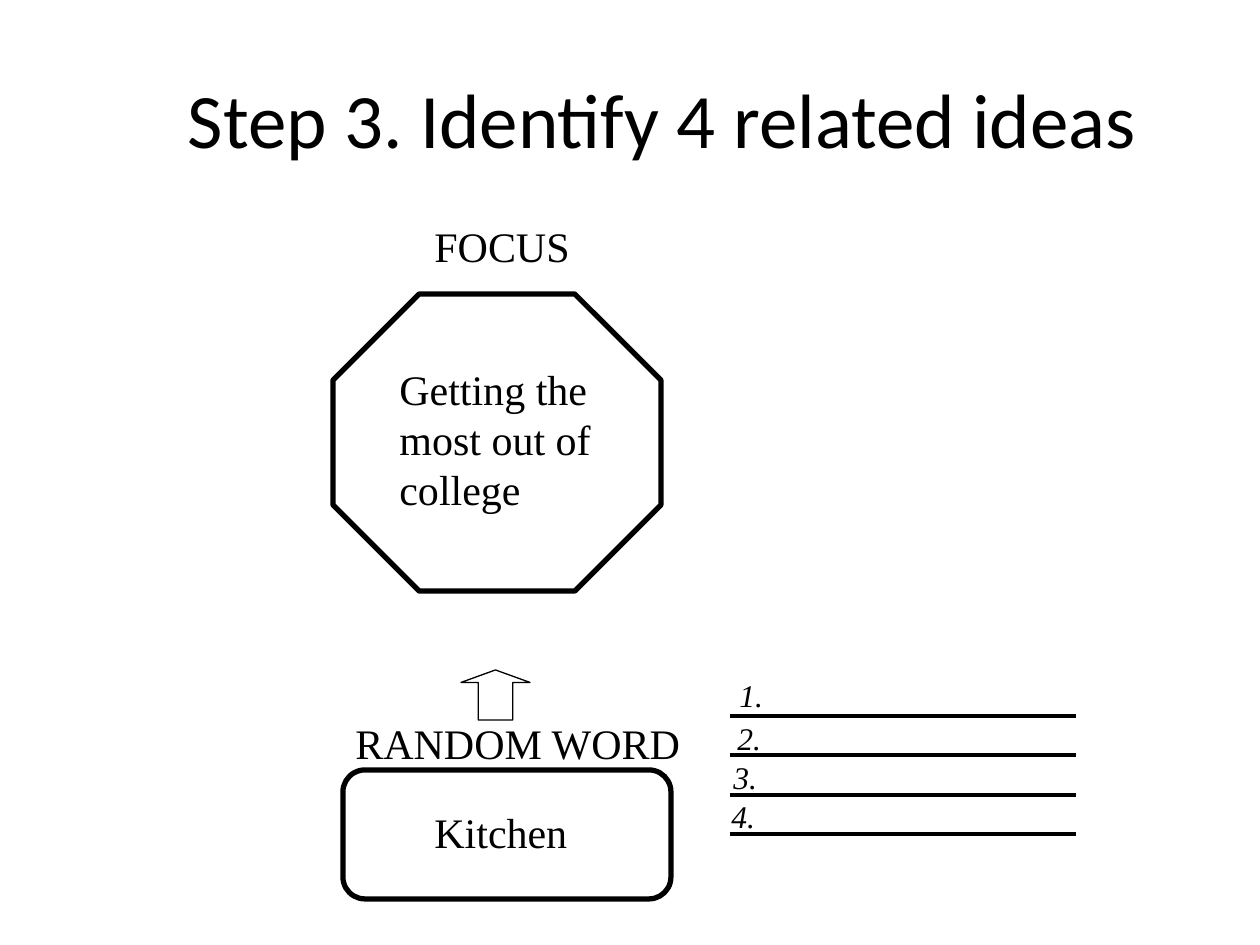
from dataclasses import dataclass

import pptx
import pptx.dml.color
import pptx.enum.shapes
import pptx.enum.text
import pptx.oxml.ns
import pptx.util
from lxml import etree

EMU_PER_PX = 914400 / 126
BLACK = "000000"
SERIF = "Times New Roman"
SHAPE_TYPE = pptx.enum.shapes.MSO_SHAPE
ALIGN = pptx.enum.text.PP_ALIGN
ANCHOR = pptx.enum.text.MSO_ANCHOR
AUTO_SIZE = pptx.enum.text.MSO_AUTO_SIZE


@dataclass
class Box:
    left: int
    top: int
    width: int
    height: int


@dataclass
class Outline:
    kind: int
    box: Box
    weight: float
    adjustments: tuple


@dataclass
class Label:
    text: str
    box: Box
    size: int = 24
    italic: bool = False


@dataclass
class Idea:
    number: str
    left: int
    top: int
    rule_y: int


def px(length: int) -> int:
    return round(length * EMU_PER_PX)


def place(box: Box) -> tuple:
    return px(box.left), px(box.top), px(box.width), px(box.height)


def color(value: str):
    return pptx.dml.color.RGBColor.from_string(value)


def add_text(slide, text: str, box: Box, *, size: int = 24, font: str = SERIF,
             italic: bool = False, align=ALIGN.LEFT, anchor=ANCHOR.TOP,
             wrap: bool = False, auto_size=AUTO_SIZE.SHAPE_TO_FIT_TEXT) -> None:
    frame = slide.shapes.add_textbox(*place(box)).text_frame
    frame.word_wrap = wrap
    frame.auto_size = auto_size
    frame.vertical_anchor = anchor
    frame.text = text
    for paragraph in frame.paragraphs:
        paragraph.alignment = align
        for run in paragraph.runs:
            run.font.name = font
            run.font.size = pptx.util.Pt(size)
            run.font.italic = italic
            run.font.color.rgb = color(BLACK)


def add_outline(slide, outline: Outline) -> None:
    shape = slide.shapes.add_shape(outline.kind, *place(outline.box))
    for index, value in enumerate(outline.adjustments):
        shape.adjustments[index] = value
    shape.shadow.inherit = False
    shape.fill.background()
    shape.line.color.rgb = color(BLACK)
    shape.line.width = pptx.util.Pt(outline.weight)


def add_rule(slide, left: int, right: int, y: int) -> None:
    connector = slide.shapes.add_connector(
        pptx.enum.shapes.MSO_CONNECTOR.STRAIGHT, px(left), px(y), px(right), px(y))
    connector.line.color.rgb = color(BLACK)
    connector.line.width = pptx.util.Pt(2.25)
    etree.SubElement(connector._element.spPr, pptx.oxml.ns.qn("a:effectLst"))


OUTLINES = [
    Outline(SHAPE_TYPE.OCTAGON, Box(333, 294, 328, 297), 3, (0.29,)),
    Outline(SHAPE_TYPE.ROUNDED_RECTANGLE, Box(343, 770, 328, 129), 3, (0.17,)),
    Outline(SHAPE_TYPE.UP_ARROW, Box(461, 670, 69, 50), 0.75, (0.5, 0.25)),
]

LABELS = [
    Label("FOCUS", Box(422, 214, 161, 63)),
    Label("Getting the\nmost out of\ncollege", Box(387, 357, 223, 165)),
    Label("RANDOM WORD", Box(343, 711, 352, 63)),
    Label("Kitchen", Box(422, 800, 159, 63)),
]

IDEAS = [
    Idea("1.", 727, 670, 716),
    Idea("2.", 725, 713, 755),
    Idea("3.", 721, 752, 795),
    Idea("4.", 719, 791, 834),
]


def main() -> None:
    presentation = pptx.Presentation()
    presentation.slide_width = px(1260)
    presentation.slide_height = px(945)
    slide = presentation.slides.add_slide(presentation.slide_layouts[6])

    # Title
    add_text(slide, "Step 3. Identify 4 related ideas", Box(129, 20, 1067, 195),
             size=44, font="Calibri", align=ALIGN.CENTER, anchor=ANCHOR.MIDDLE,
             wrap=True, auto_size=AUTO_SIZE.NONE)

    # Focus octagon, random word box and the arrow between them
    for outline in OUTLINES:
        add_outline(slide, outline)
    for label in LABELS:
        add_text(slide, label.text, label.box, size=label.size, italic=label.italic)

    # Numbered lines for the related ideas
    for idea in IDEAS:
        add_rule(slide, 730, 1076, idea.rule_y)
        add_text(slide, idea.number, Box(idea.left, idea.top, 49, 50),
                 size=18, italic=True)

    presentation.save("out.pptx")


if __name__ == "__main__":
    main()
